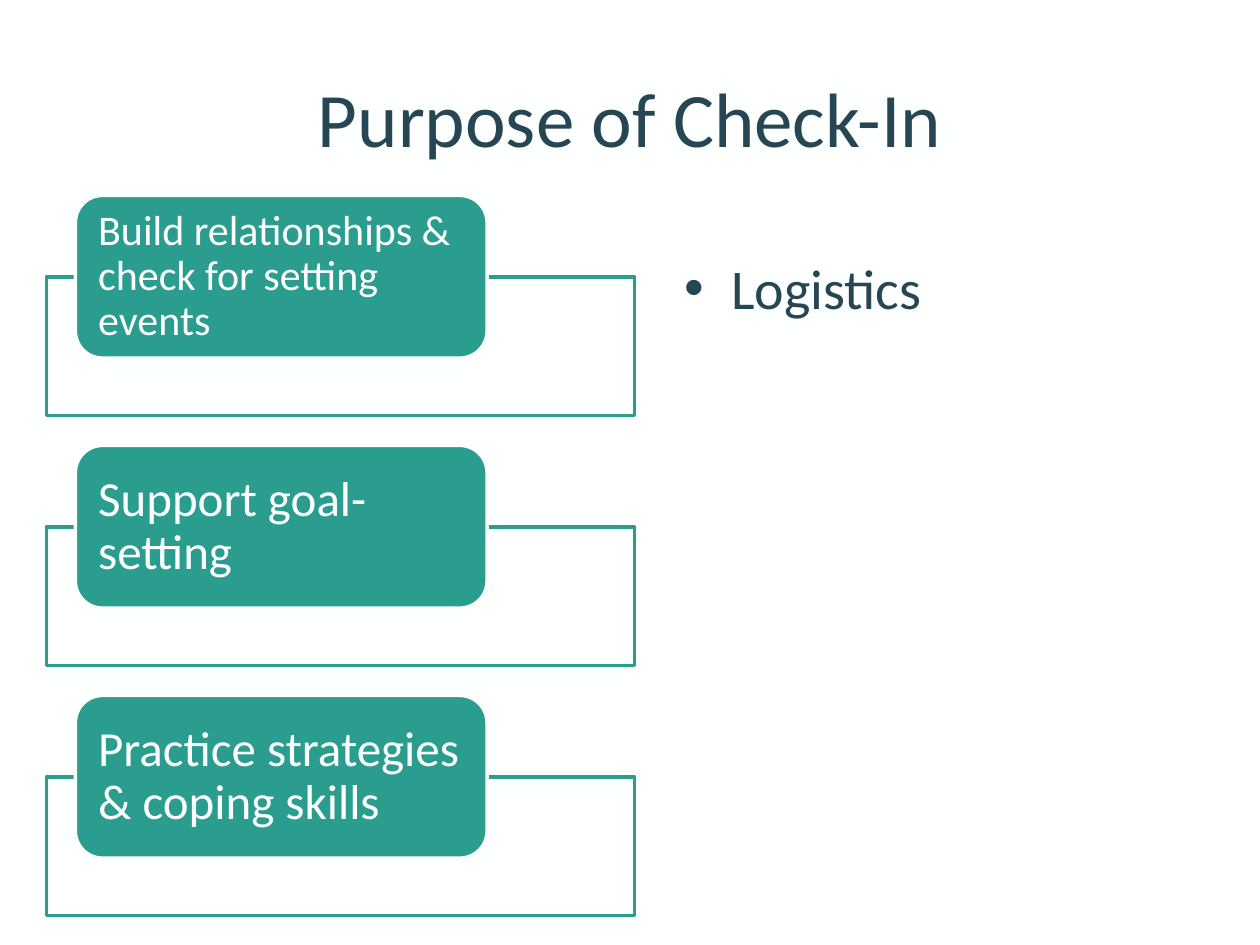
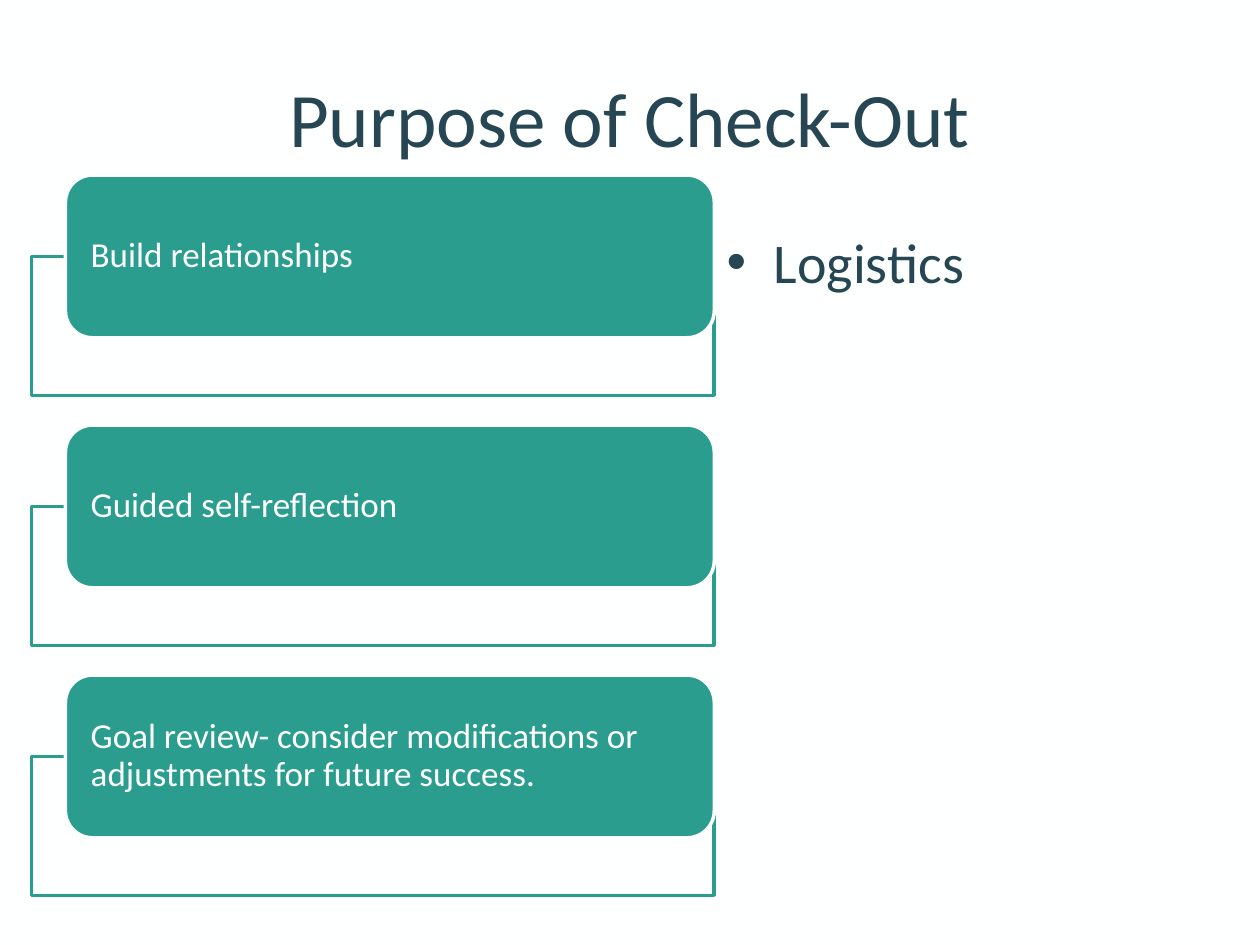
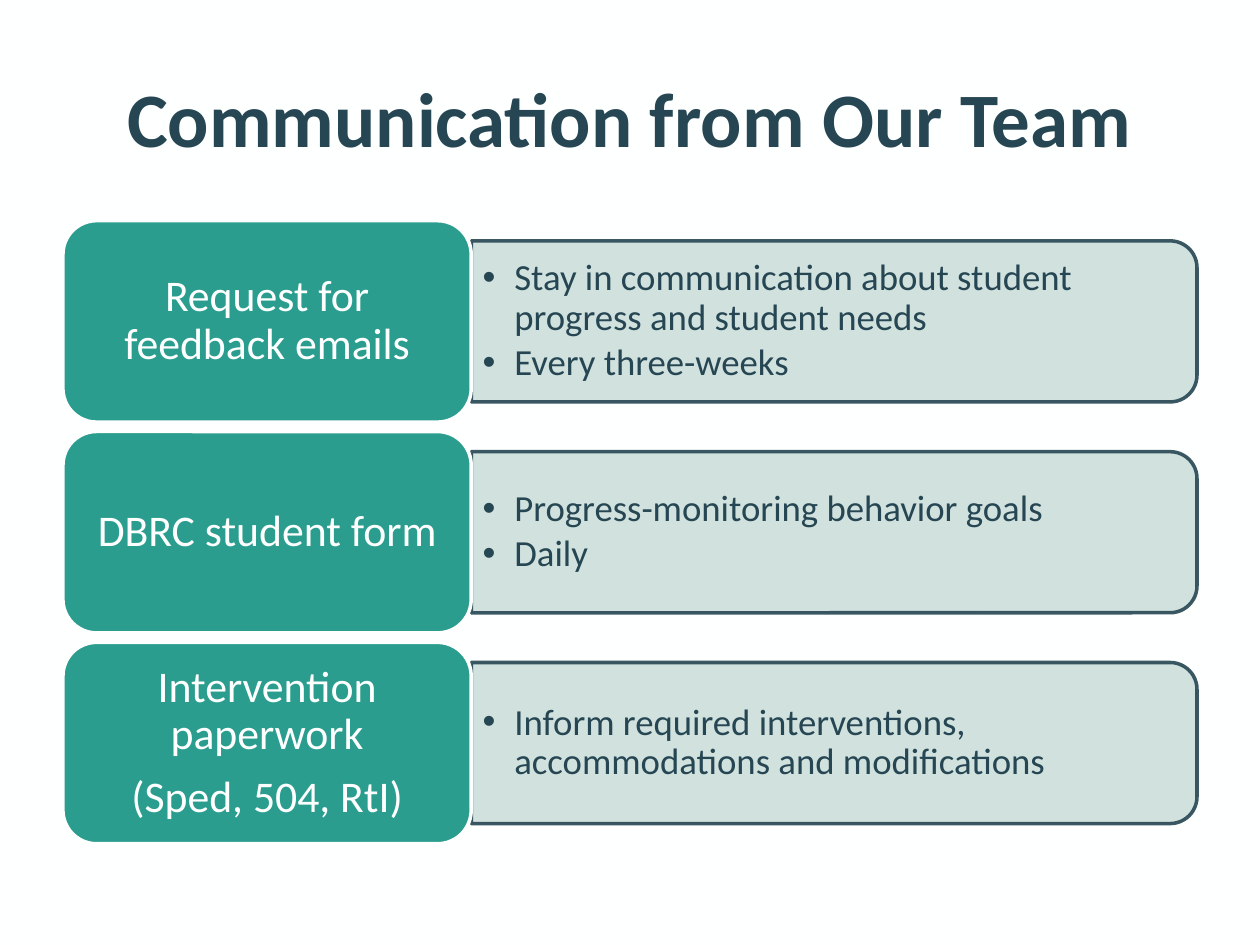
"""Build three slides on check-in, check-out and team communication."""
from lxml.etree import SubElement
from pptx import Presentation
from pptx.dml.color import RGBColor
from pptx.enum.shapes import MSO_SHAPE
from pptx.enum.text import MSO_ANCHOR, PP_ALIGN
from pptx.oxml.ns import qn
from pptx.util import Cm, Pt

PAPER = RGBColor(0xFE, 0xFF, 0xFF)
TEAL = RGBColor(0x2A, 0x9D, 0x8F)
NAVY = RGBColor(0x26, 0x46, 0x53)
MIST = RGBColor(0xCD, 0xDF, 0xDB)
FONT = "Calibri"


class Deck:
    """Holds the shared style and the current slide."""

    def __init__(self):
        self.presentation = Presentation()
        self.presentation.slide_width = Cm(25.4)
        self.presentation.slide_height = Cm(19.05)
        self.slide = None

    def add_slide(self, title, bold=False):
        """Start a slide with its background and title."""
        self.slide = self.presentation.slides.add_slide(self.presentation.slide_layouts[6])
        self.slide.background.fill.solid()
        self.slide.background.fill.fore_color.rgb = PAPER
        box = self.text_box(1.27, 0.76, 22.86, 3.18)
        self.set_text(box, [title], 44, NAVY, align=PP_ALIGN.CENTER, bold=bold)

    def text_box(self, left, top, width, height):
        """Add an empty text box."""
        return self.slide.shapes.add_textbox(Cm(left), Cm(top), Cm(width), Cm(height))

    def outline(self, kind, left, top, width, height, fill, line):
        """Add a filled preset shape with a two-point line."""
        shape = self.slide.shapes.add_shape(kind, Cm(left), Cm(top), Cm(width), Cm(height))
        shape.shadow.inherit = False
        shape.fill.solid()
        shape.fill.fore_color.rgb = fill
        shape.line.color.rgb = line
        shape.line.width = Pt(2)
        return shape

    def soften(self, shape, with_line=False):
        """Make the fill, and the line if asked, ninety percent opaque."""
        properties = shape.element.spPr
        parents = [properties]
        if with_line:
            parents.append(properties.find(qn("a:ln")))
        for parent in parents:
            color = parent.find(qn("a:solidFill")).find(qn("a:srgbClr"))
            SubElement(color, qn("a:alpha"), val="90000")

    def set_text(self, shape, lines, size, color, margins=(0.25, 0.13), align=PP_ALIGN.LEFT,
                 anchor=MSO_ANCHOR.MIDDLE, spacing=1.0, gap=0, indent=0, bold=False):
        """Set the paragraphs of a shape, with bullets when there is an indent."""
        frame = shape.text_frame
        frame.word_wrap = True
        frame.vertical_anchor = anchor
        frame.margin_left = frame.margin_right = Cm(margins[0])
        frame.margin_top = frame.margin_bottom = Cm(margins[1])
        frame.text = "\n".join(lines)
        for paragraph in frame.paragraphs:
            paragraph.alignment = align
            paragraph.line_spacing = spacing
            if indent:
                self.bullet(paragraph, indent)
            for run in paragraph.runs:
                run.font.name = FONT
                run.font.size = Pt(size)
                run.font.bold = bold
                run.font.color.rgb = color
        for paragraph in frame.paragraphs[:-1]:
            paragraph.space_after = Pt(gap)

    def bullet(self, paragraph, indent):
        """Give a paragraph a hanging round bullet."""
        properties = paragraph._p.get_or_add_pPr()
        properties.set("marL", str(Cm(indent)))
        properties.set("indent", str(-Cm(indent)))
        SubElement(properties, qn("a:buFont"), typeface="Arial")
        SubElement(properties, qn("a:buChar"), char="•")

    def side_note(self, text, left, top, width):
        """Add the large bullet beside the purposes."""
        box = self.text_box(left, top, width, 12.57)
        self.set_text(box, [text], 32, NAVY, anchor=MSO_ANCHOR.TOP, indent=0.95)

    def pill(self, lines, left, top, width, height, size, margins, align=PP_ALIGN.LEFT):
        """Add a teal rounded label."""
        shape = self.outline(MSO_SHAPE.ROUNDED_RECTANGLE, left, top, width, height, TEAL, PAPER)
        self.set_text(shape, lines, size, PAPER, margins, align, spacing=0.9, gap=0.35 * size)

    def purposes(self, items, top, frame_span, pill_span, margin):
        """Stack labels that each overlap the top edge of a frame."""
        pill_height, pitch = 3.28, 5.04
        for row, (text, size) in enumerate(items):
            pill_top = top + row * pitch
            frame = self.outline(MSO_SHAPE.RECTANGLE, frame_span[0], pill_top + pill_height / 2,
                                 frame_span[1], 2.8, PAPER, TEAL)
            self.soften(frame)
            self.pill([text], pill_span[0], pill_top, pill_span[1], pill_height, size, (margin, 0))

    def panel(self, lines, left, top, width, height):
        """Add a bulleted panel whose right corners are rounded."""
        shift = (width - height) / 2
        shape = self.outline(MSO_SHAPE.ROUND_2_SAME_RECTANGLE, left + shift, top - shift,
                             height, width, MIST, NAVY)
        shape.rotation = 90
        self.soften(shape, with_line=True)
        box = self.text_box(left, top + 0.16, width - 0.16, height - 0.32)
        self.set_text(box, lines, 21, NAVY, (0.23, 0.1), spacing=0.9, gap=3, indent=0.64)

    def messages(self, items):
        """Stack labels that each have a panel of details."""
        left, top, width, height, pitch = 1.27, 4.45, 8.23, 4.06, 4.25
        panel_height = 0.8 * height
        for row, (labels, details) in enumerate(items):
            row_top = top + row * pitch
            self.panel(details, left + width, row_top + (height - panel_height) / 2,
                       14.63, panel_height)
            self.pill(labels, left, row_top, width, height, 25, (0.25, 0.13), PP_ALIGN.CENTER)


def main():
    """Build and save the slides."""
    deck = Deck()

    deck.add_slide("Purpose of Check-In")
    deck.side_note("Logistics", 13.54, 4.98, 10.59)
    deck.purposes([
        ("Build relationships & check for setting events", 24),
        ("Support goal-setting", 28),
        ("Practice strategies & coping skills", 28),
    ], 3.94, (0.94, 11.85), (1.52, 8.3), 0.3)

    deck.add_slide("Purpose of Check-Out")
    deck.side_note("Logistics", 14.4, 4.45, 9.73)
    deck.purposes([
        ("Build relationships", 20),
        ("Guided self-reflection", 20),
        ("Goal review- consider modifications or adjustments for future success.", 20),
    ], 3.53, (0.64, 13.76), (1.32, 13.08), 0.35)

    deck.add_slide("Communication from Our Team", bold=True)
    deck.messages([
        (["Request for feedback emails"],
         ["Stay in communication about student progress and student needs",
          "Every three-weeks"]),
        (["DBRC student form"],
         ["Progress-monitoring behavior goals", "Daily"]),
        (["Intervention paperwork", "(Sped, 504, RtI)"],
         ["Inform required interventions, accommodations and modifications"]),
    ])

    deck.presentation.save("out.pptx")


if __name__ == "__main__":
    main()
